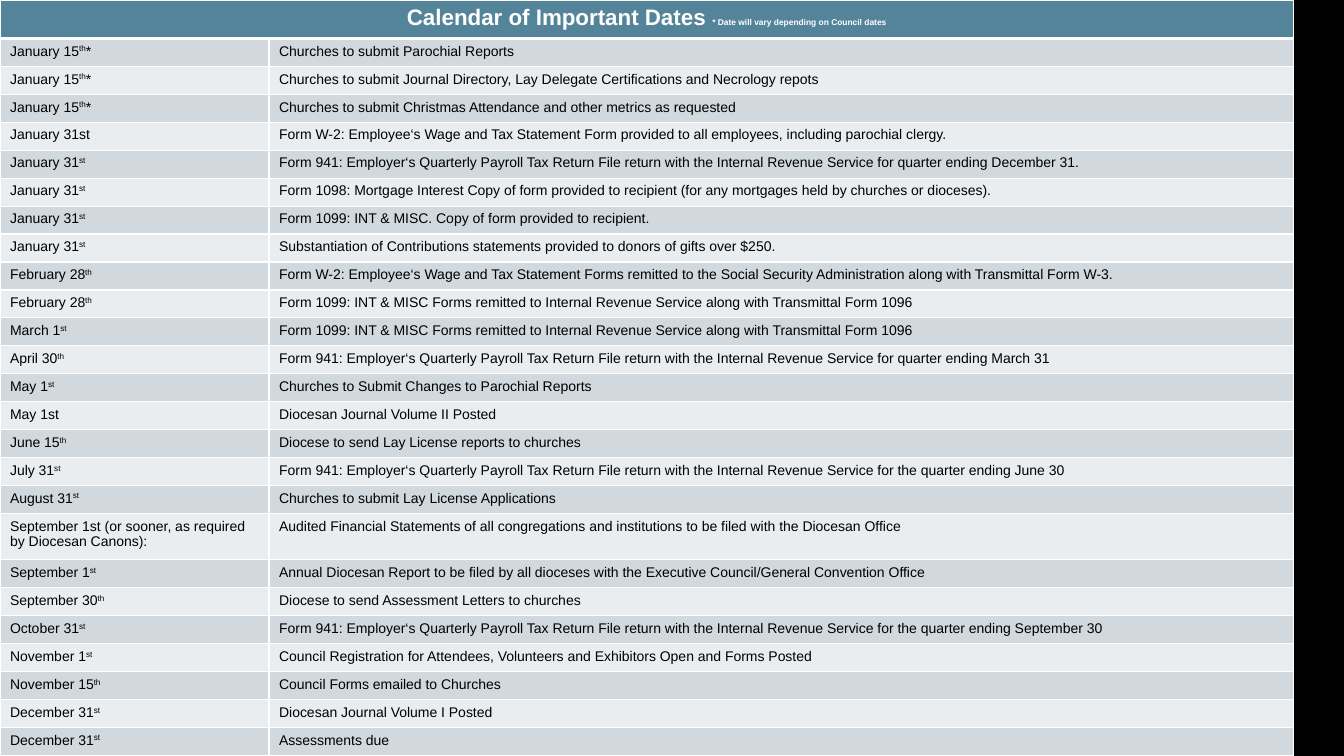
from lxml.etree import SubElement
from pptx import Presentation
from pptx.dml.color import RGBColor
from pptx.enum.text import PP_ALIGN as Align
from pptx.oxml.ns import qn
from pptx.util import Cm, Pt

SLIDE_WIDTH, SLIDE_HEIGHT = Cm(33.87), Cm(19.05)
COLUMN_WIDTHS = Cm(6.78), Cm(25.81)
HEADER_HEIGHT, TALL_HEIGHT = Cm(0.97), Cm(1.17)

SEPTEMBER_AUDIT = "September 1st (or sooner, as required by Diocesan Canons):"
FORM_941 = ("Form 941: Employer‘s Quarterly Payroll Tax Return File return with "
            "the Internal Revenue Service for ")
FORM_1099 = ("Form 1099: INT & MISC Forms remitted to Internal Revenue Service "
             "along with Transmittal Form 1096")
FORM_W2 = "Form W-2: Employee‘s Wage and Tax Statement "

# Text between carets is superscript.
DATES = [
    ("January 15^th^*", "Churches to submit Parochial Reports"),
    ("January 15^th^*", "Churches to submit Journal Directory, Lay Delegate "
                        "Certifications and Necrology repots"),
    ("January 15^th^*", "Churches to submit Christmas Attendance and other metrics as requested"),
    ("January 31st", FORM_W2 + "Form provided to all employees, including parochial clergy."),
    ("January 31^st^", FORM_941 + "quarter ending December 31."),
    ("January 31^st^", "Form 1098: Mortgage Interest Copy of form provided to recipient "
                       "(for any mortgages held by churches or dioceses)."),
    ("January 31^st^", "Form 1099: INT & MISC. Copy of form provided to recipient."),
    ("January 31^st^", "Substantiation of Contributions statements provided to donors "
                       "of gifts over $250."),
    ("February 28^th^", FORM_W2 + "Forms remitted to the Social Security Administration "
                                  "along with Transmittal Form W-3."),
    ("February 28^th^", FORM_1099),
    ("March 1^st^", FORM_1099),
    ("April 30^th^", FORM_941 + "quarter ending March 31"),
    ("May 1^st^", "Churches to Submit Changes to Parochial Reports"),
    ("May 1st", "Diocesan Journal Volume II Posted"),
    ("June 15^th^", "Diocese to send Lay License reports to churches"),
    ("July 31^st^", FORM_941 + "the quarter ending June 30"),
    ("August 31^st^", "Churches to submit Lay License Applications"),
    (SEPTEMBER_AUDIT, "Audited Financial Statements of all congregations and institutions "
                      "to be filed with the Diocesan Office"),
    ("September 1^st^", "Annual Diocesan Report to be filed by all dioceses with the "
                        "Executive Council/General Convention Office"),
    ("September 30^th^", "Diocese to send Assessment Letters to churches"),
    ("October 31^st^", FORM_941 + "the quarter ending September 30"),
    ("November 1^st^", "Council Registration for Attendees, Volunteers and Exhibitors "
                       "Open and Forms Posted"),
    ("November 15^th^", "Council Forms emailed to Churches"),
    ("December 31^st^", "Diocesan Journal Volume I Posted"),
    ("December 31^st^", "Assessments due"),
]


def color(value):
    return RGBColor.from_string(value)


class CalendarSlide:
    FONT = "Arial"
    BACKGROUND, BORDER, HEADER = "000000", "FFFFFF", "54849A"
    BANDS = "D1D9DE", "E9EDEF"
    HEADER_TEXT, BODY_TEXT = "FFFFFF", "000000"

    def __init__(self, presentation):
        self.slide = presentation.slides.add_slide(presentation.slide_layouts[6])
        fill = self.slide.background.fill
        fill.solid()
        fill.fore_color.rgb = color(self.BACKGROUND)

    def add_run(self, paragraph, text, text_color, superscript=False, **font_format):
        run = paragraph.add_run()
        run.text = text
        for name, value in {"name": self.FONT, **font_format}.items():
            setattr(run.font, name, value)
        run.font.color.rgb = color(text_color)
        if superscript:
            run.font._element.set("baseline", "30000")

    def style_cell(self, cell, fill_color, top=1, bottom=1):
        """Draw the borders, given in points, and then the fill."""
        properties = cell._tc.get_or_add_tcPr()
        for side, width in {"L": 1, "R": 1, "T": top, "B": bottom}.items():
            line = SubElement(properties, qn(f"a:ln{side}"), w=str(Pt(width)))
            solid = SubElement(line, qn("a:solidFill"))
            SubElement(solid, qn("a:srgbClr"), val=self.BORDER)
        cell.fill.solid()
        cell.fill.fore_color.rgb = color(fill_color)

    def add_header(self, table):
        for cell in table.rows[0].cells:
            self.style_cell(cell, self.HEADER, bottom=3)
        title = table.cell(0, 0)
        title.merge(table.cell(0, 1))
        paragraph = title.text_frame.paragraphs[0]
        paragraph.alignment = Align.CENTER
        for text, size in (("Calendar of Important Dates ", 16),
                           ("* Date will vary depending on Council dates", 6)):
            self.add_run(paragraph, text, self.HEADER_TEXT, size=Pt(size), bold=True)

    def add_calendar(self, dates):
        table = self.slide.shapes.add_table(
            len(dates) + 1, 2, 0, 0, sum(COLUMN_WIDTHS), SLIDE_HEIGHT).table
        for column, width in zip(table.columns, COLUMN_WIDTHS):
            column.width = width
        row_height = (SLIDE_HEIGHT - HEADER_HEIGHT - TALL_HEIGHT) // (len(dates) - 1)
        table.rows[0].height = HEADER_HEIGHT
        self.add_header(table)
        for index, entry in enumerate(dates):
            row = table.rows[index + 1]
            row.height = TALL_HEIGHT if entry[0] == SEPTEMBER_AUDIT else row_height
            for cell, text in zip(row.cells, entry):
                self.style_cell(cell, self.BANDS[index % 2], top=1 if index else 3)
                paragraph = cell.text_frame.paragraphs[0]
                for part, piece in enumerate(text.split("^")):
                    if piece:
                        self.add_run(paragraph, piece, self.BODY_TEXT, part % 2 == 1,
                                     size=Pt(10), bold=False)


def main():
    presentation = Presentation()
    presentation.slide_width, presentation.slide_height = SLIDE_WIDTH, SLIDE_HEIGHT
    CalendarSlide(presentation).add_calendar(DATES)
    presentation.save("out.pptx")


if __name__ == "__main__":
    main()
